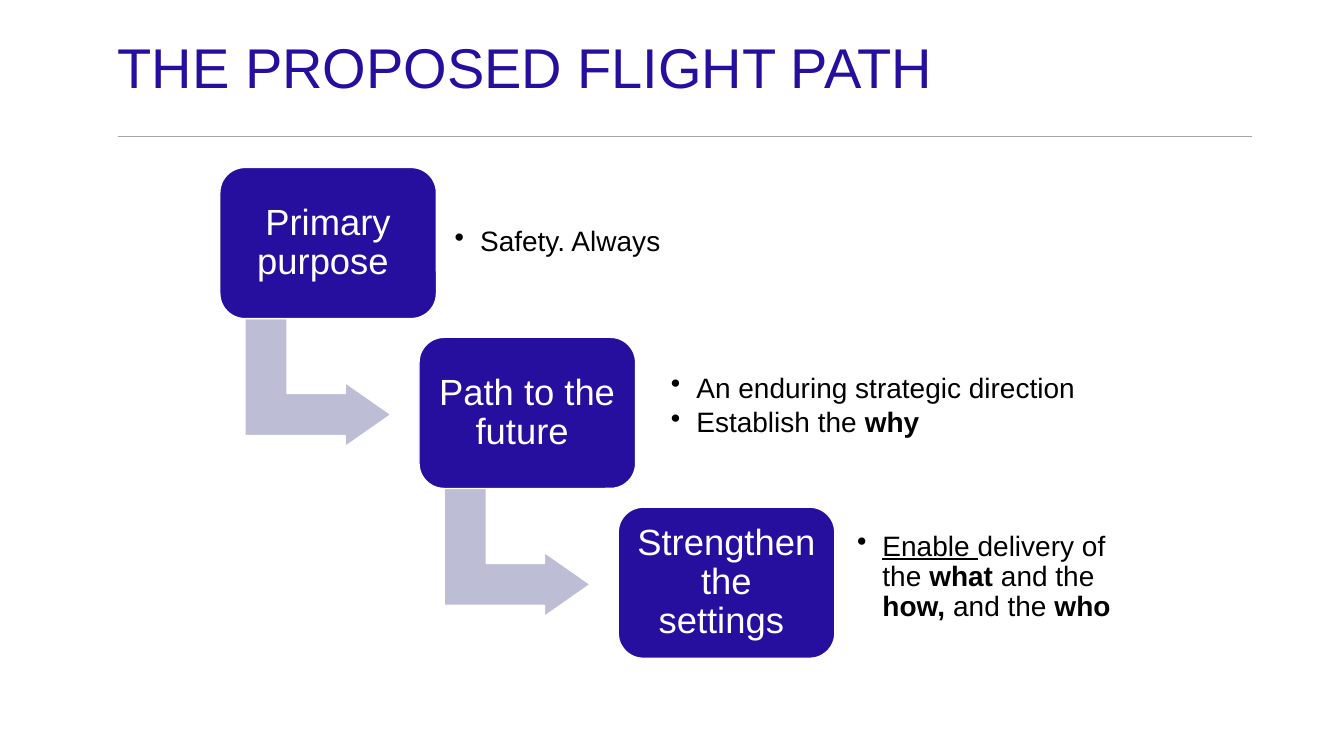
from lxml import etree
from pptx import Presentation
from pptx import util as u
from pptx.dml.color import RGBColor
from pptx.enum import shapes, text
from pptx.oxml.ns import qn

Cm, Pt = u.Cm, u.Pt
INDIGO = RGBColor(0x26, 0x0F, 0x9E)
LAVENDER = RGBColor(0xBE, 0xBD, 0xD6)
GREY = RGBColor(0xA6, 0xA6, 0xA6)
WHITE = RGBColor(0xFF, 0xFF, 0xFF)
BLACK = RGBColor(0, 0, 0)

CARD_WIDTH, CARD_HEIGHT = Cm(5.46), Cm(3.81)
FIRST_LEFT, FIRST_TOP = Cm(5.54), Cm(4.22)
STEP_RIGHT, STEP_DOWN = Cm(5.02), Cm(4.28)

# Each step: label, bullet box offset and width (cm), inset (cm), bullets.
# A bullet is a list of (words, style) spans.
STEPS = [
    ("Primary purpose ", (5.64, 0.36), 6.02, 0.28,
     [[("Safety. Always", "")]]),
    ("Path to the future ", (6.07, 0.2), 12.17, 0.28,
     [[("An enduring strategic direction", "")],
      [("Establish the ", ""), ("why", "bold")]]),
    ("Strengthen the settings ", (5.82, 0.23), 7.49, 0.2,
     [[("Enable ", "underline"), ("delivery of the ", ""), ("what ", "bold"),
       ("and the ", ""), ("how, ", "bold"), ("and the ", ""),
       ("who", "bold")]]),
]


def write(box, paragraphs, size, color, inset=0.0, bullet=False,
          align=text.PP_ALIGN.LEFT, anchor=text.MSO_ANCHOR.MIDDLE):
    """Fill a shape with paragraphs, each a list of (words, style) spans."""
    frame = box.text_frame
    frame.word_wrap = True
    frame.vertical_anchor = anchor
    frame.margin_left = frame.margin_right = Cm(inset)
    frame.margin_top = frame.margin_bottom = Cm(inset)
    for index, spans in enumerate(paragraphs):
        para = frame.add_paragraph() if index else frame.paragraphs[0]
        para.alignment = align
        para.line_spacing = 0.9
        if index:
            para.space_before = Pt(3)
        if bullet:
            properties = para._p.get_or_add_pPr()
            properties.set("marL", str(Cm(0.64)))
            properties.set("indent", str(-Cm(0.64)))
            etree.SubElement(properties, qn("a:buChar")).set("char", "•")
        for words, style in spans:
            span = para.add_run()
            span.text = words
            span.font.name = "Arial"
            span.font.size = Pt(size)
            span.font.color.rgb = color
            if style:
                setattr(span.font, style, True)


def add_block(page, kind, left, top, width, height, color):
    block = page.shapes.add_shape(kind, left, top, width, height)
    block.shadow.inherit = False
    block.fill.solid()
    block.fill.fore_color.rgb = color
    block.line.color.rgb = WHITE
    block.line.width = Pt(1)
    return block


def add_header(page, left, top, width):
    # Rule under the title
    rule_top = top + Cm(2.41)
    rule = page.shapes.add_connector(
        shapes.MSO_CONNECTOR.STRAIGHT, left, rule_top, left + width, rule_top)
    rule.line.color.rgb = GREY
    rule.line.width = Pt(0.75)
    etree.SubElement(rule._element.spPr, qn("a:effectLst"))

    # Title
    title = page.shapes.add_textbox(left, top, width, Cm(1.27))
    write(title, [[("THE PROPOSED FLIGHT PATH", "")]], 40, INDIGO,
          anchor=text.MSO_ANCHOR.TOP)


def add_step(page, left, top, step, has_next):
    label, (shift, drop), width, inset, bullets = step

    # Bent arrow leading to the next card
    if has_next:
        arrow = add_block(page, shapes.MSO_SHAPE.BENT_UP_ARROW,
                          left + Cm(0.86), top + Cm(3.58),
                          Cm(3.23), Cm(3.68), LAVENDER)
        arrow.rotation = 90
        for index, value in enumerate((0.328, 0.25, 0.358)):
            arrow.adjustments[index] = value

    # Card
    card = add_block(page, shapes.MSO_SHAPE.ROUNDED_RECTANGLE,
                     left, top, CARD_WIDTH, CARD_HEIGHT, INDIGO)
    write(card, [[(label, "")]], 26, WHITE, inset=0.28,
          align=text.PP_ALIGN.CENTER)

    # Bullets beside the card
    notes = page.shapes.add_textbox(left + Cm(shift), top + Cm(drop),
                                    Cm(width), Cm(3.07))
    write(notes, bullets, 20, BLACK, inset=inset, bullet=True)


def main():
    deck = Presentation()
    deck.slide_width, deck.slide_height = Cm(33.87), Cm(19.05)
    page = deck.slides.add_slide(deck.slide_layouts[6])
    add_header(page, Cm(2.97), Cm(1.02), Cm(28.58))
    for index, step in enumerate(STEPS):
        add_step(page, FIRST_LEFT + index * STEP_RIGHT,
                 FIRST_TOP + index * STEP_DOWN, step,
                 has_next=index < len(STEPS) - 1)
    deck.save("out.pptx")


if __name__ == "__main__":
    main()
